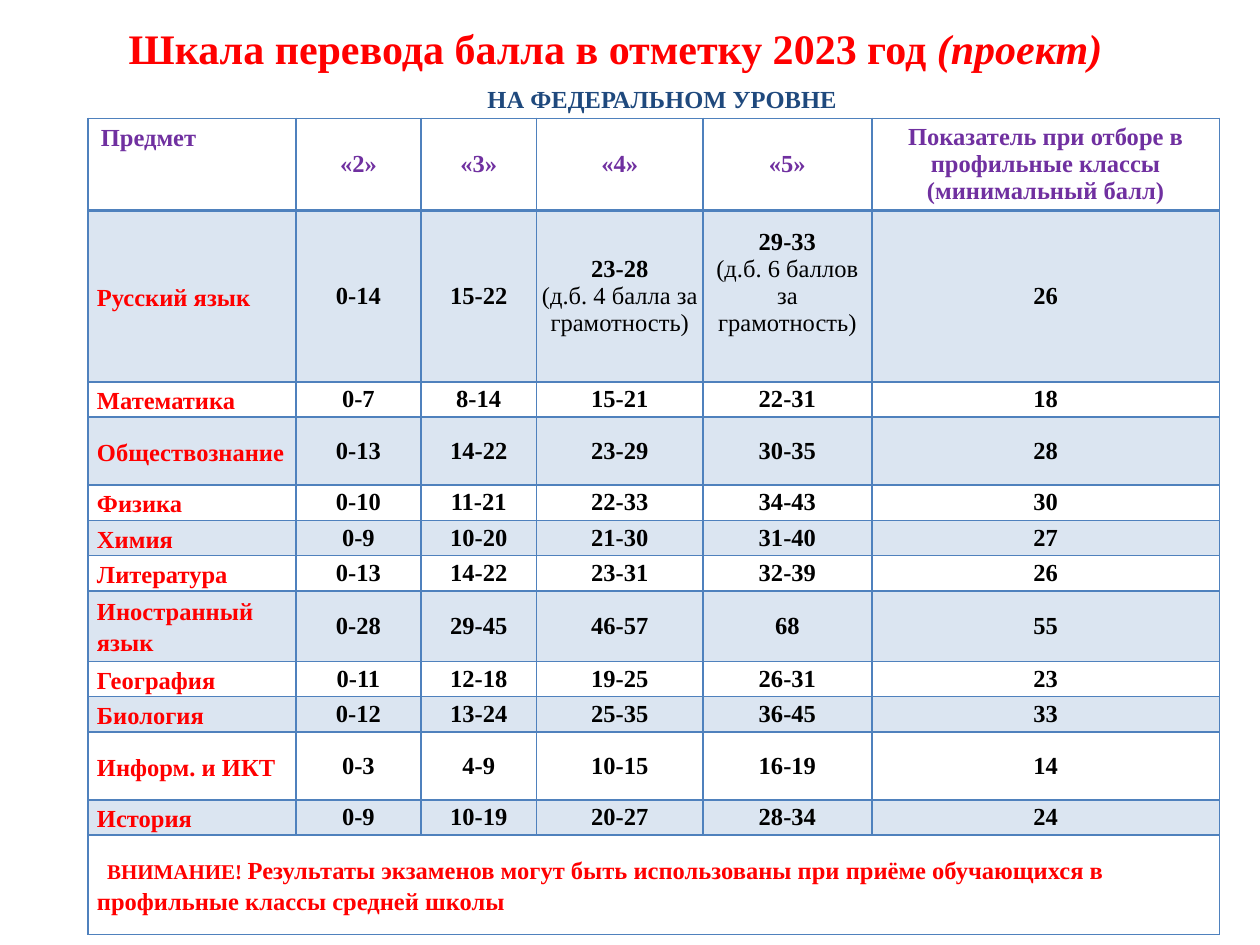
from dataclasses import dataclass

from lxml.etree import SubElement
from pptx import Presentation
from pptx.dml.color import RGBColor
from pptx.enum.text import MSO_ANCHOR as Anchor, MSO_AUTO_SIZE as AutoSize, PP_ALIGN as Align
from pptx.oxml import parse_xml
from pptx.oxml.ns import nsdecls, qn
from pptx.util import Inches, Pt

TITLE = [("Шкала перевода балла в отметку 2023 год ", False), ("(проект)", True)]
SUBTITLE = "НА ФЕДЕРАЛЬНОМ УРОВНЕ"
HEADER = ["Предмет", "«2»", "«3»", "«4»", "«5»",
          "Показатель при отборе в профильные классы\n(минимальный балл)"]
SUBJECTS = [
    ("Русский язык", "0-14", "15-22", "23-28\n(д.б. 4 балла за грамотность)",
     "29-33\n(д.б. 6 баллов за грамотность)", "26"),
    ("Математика", "0-7", "8-14", "15-21", "22-31", "18"),
    ("Обществознание", "0-13", "14-22", "23-29", "30-35", "28"),
    ("Физика", "0-10", "11-21", "22-33", "34-43", "30"),
    ("Химия", "0-9", "10-20", "21-30", "31-40", "27"),
    ("Литература", "0-13", "14-22", "23-31", "32-39", "26"),
    ("Иностранный язык", "0-28", "29-45", "46-57", "68", "55"),
    ("География", "0-11", "12-18", "19-25", "26-31", "23"),
    ("Биология", "0-12", "13-24", "25-35", "36-45", "33"),
    ("Информ. и ИКТ", "0-3", "4-9", "10-15", "16-19", "14"),
    ("История", "0-9", "10-19", "20-27", "28-34", "24"),
]
WARNING = "ВНИМАНИЕ! "
NOTE = ("Результаты экзаменов могут быть использованы при приёме обучающихся "
        "в профильные классы средней школы")

COLUMN_WIDTHS = [1.65, 0.99, 0.92, 1.32, 1.34, 2.76]
LINE_ROW = 0.28
ROW_HEIGHTS = [0.73, 1.36] + [LINE_ROW] * 10 + [0.79]
ROW_HEIGHTS[3] = ROW_HEIGHTS[10] = 0.54
ROW_HEIGHTS[7] = 0.56


@dataclass(frozen=True)
class Theme:
    font: str = "Times New Roman"
    red: str = "FF0000"
    navy: str = "1F497D"
    purple: str = "7030A0"
    black: str = "000000"
    blue: str = "4F81BD"
    band_alpha: int = 20000
    title_size: int = 24
    body_size: int = 14
    warning_size: int = 12
    line: int = 1
    header_line: int = 2


theme = Theme()


def format_paragraph(paragraph, color, size=theme.body_size, bold=True, align=Align.CENTER):
    paragraph.alignment = align
    font = paragraph.font
    font.name, font.size, font.bold = theme.font, Pt(size), bold
    font.color.rgb = RGBColor.from_string(color)


def set_margins(cell, side, vertical=0.0):
    cell.margin_left = cell.margin_right = Inches(side)
    cell.margin_top = cell.margin_bottom = Inches(vertical)


def fill_cell(cell, banded):
    if not banded:
        cell.fill.background()
        return
    cell.fill.solid()
    cell.fill.fore_color.rgb = RGBColor.from_string(theme.blue)
    color = next(cell._tc.tcPr.iter(qn("a:srgbClr")))
    SubElement(color, qn("a:alpha"), val=str(theme.band_alpha))


def draw_borders(cell, top, bottom):
    widths = {"lnL": theme.line, "lnR": theme.line, "lnT": top, "lnB": bottom}
    for position, (tag, width) in enumerate(widths.items()):
        cell._tc.tcPr.insert(position, parse_xml(
            f'<a:{tag} {nsdecls("a")} w="{Pt(width)}"><a:solidFill>'
            f'<a:srgbClr val="{theme.blue}"/></a:solidFill></a:{tag}>'))


def write_cell(cell, text, row, column):
    cell.text_frame.text = text
    cell.vertical_anchor = Anchor.MIDDLE
    first = column == 0
    set_margins(cell, 0.07 if first else 0.04)
    color = theme.purple if row == 0 else theme.red if first else theme.black
    for index, paragraph in enumerate(cell.text_frame.paragraphs):
        format_paragraph(paragraph, color, bold=row == 0 or index == 0,
                         align=Align.LEFT if first else Align.CENTER)
        if first and row:
            paragraph.line_spacing = 1.15


def write_note(cell):
    set_margins(cell, 0.07)
    cell.vertical_anchor = Anchor.MIDDLE
    paragraph = cell.text_frame.paragraphs[0]
    paragraph.line_spacing = 1.15
    paragraph._p.get_or_add_pPr().set("indent", str(Inches(0.08)))
    format_paragraph(paragraph, theme.red, align=Align.LEFT)
    warning = paragraph.add_run()
    warning.text = WARNING
    warning.font.size = Pt(theme.warning_size)
    paragraph.add_run().text = NOTE


def add_title(slide):
    title = slide.shapes.title
    title.left, title.top, title.width, title.height = map(Inches, (0.47, 0.16, 8.83, 0.47))
    frame = title.text_frame
    frame.vertical_anchor, frame.auto_size = Anchor.BOTTOM, AutoSize.NONE
    paragraph = frame.paragraphs[0]
    format_paragraph(paragraph, theme.red, theme.title_size)
    for text, italic in TITLE:
        run = paragraph.add_run()
        run.text = text
        run.font.italic = italic


def add_subtitle(slide):
    frame = slide.shapes.add_textbox(*map(Inches, (3.12, 0.62, 4.27, 0.34))).text_frame
    frame.word_wrap = True
    frame.text = SUBTITLE
    format_paragraph(frame.paragraphs[0], theme.navy)


def add_score_table(slide):
    rows, columns = len(ROW_HEIGHTS), len(COLUMN_WIDTHS)
    table = slide.shapes.add_table(
        rows, columns, Inches(0.7), Inches(0.94),
        Inches(sum(COLUMN_WIDTHS)), Inches(sum(ROW_HEIGHTS))).table
    table.first_row = table.horz_banding = False
    for column, width in zip(table.columns, COLUMN_WIDTHS):
        column.width = Inches(width)
    for row, height in zip(table.rows, ROW_HEIGHTS):
        row.height = Inches(height)

    for row, texts in enumerate([HEADER, *SUBJECTS]):
        for column, text in enumerate(texts):
            write_cell(table.cell(row, column), text, row, column)
    corner = table.cell(0, 0)
    corner.vertical_anchor = Anchor.TOP
    set_margins(corner, 0.1, 0.05)
    table.cell(1, 4).margin_bottom = Inches(0.42 / 2)

    last = rows - 1
    table.cell(last, 0).merge(table.cell(last, columns - 1))
    write_note(table.cell(last, 0))
    for row in range(rows):
        for column in range(columns):
            cell = table.cell(row, column)
            fill_cell(cell, banded=row % 2 == 1)
            draw_borders(cell, top=theme.header_line if row == 1 else theme.line,
                         bottom=theme.header_line if row == 0 else theme.line)


def main():
    presentation = Presentation()
    presentation.slide_width, presentation.slide_height = Inches(10), Inches(7.5)
    slide = presentation.slides.add_slide(presentation.slide_layouts[5])
    add_title(slide)
    add_subtitle(slide)
    add_score_table(slide)
    presentation.save("out.pptx")


if __name__ == "__main__":
    main()
